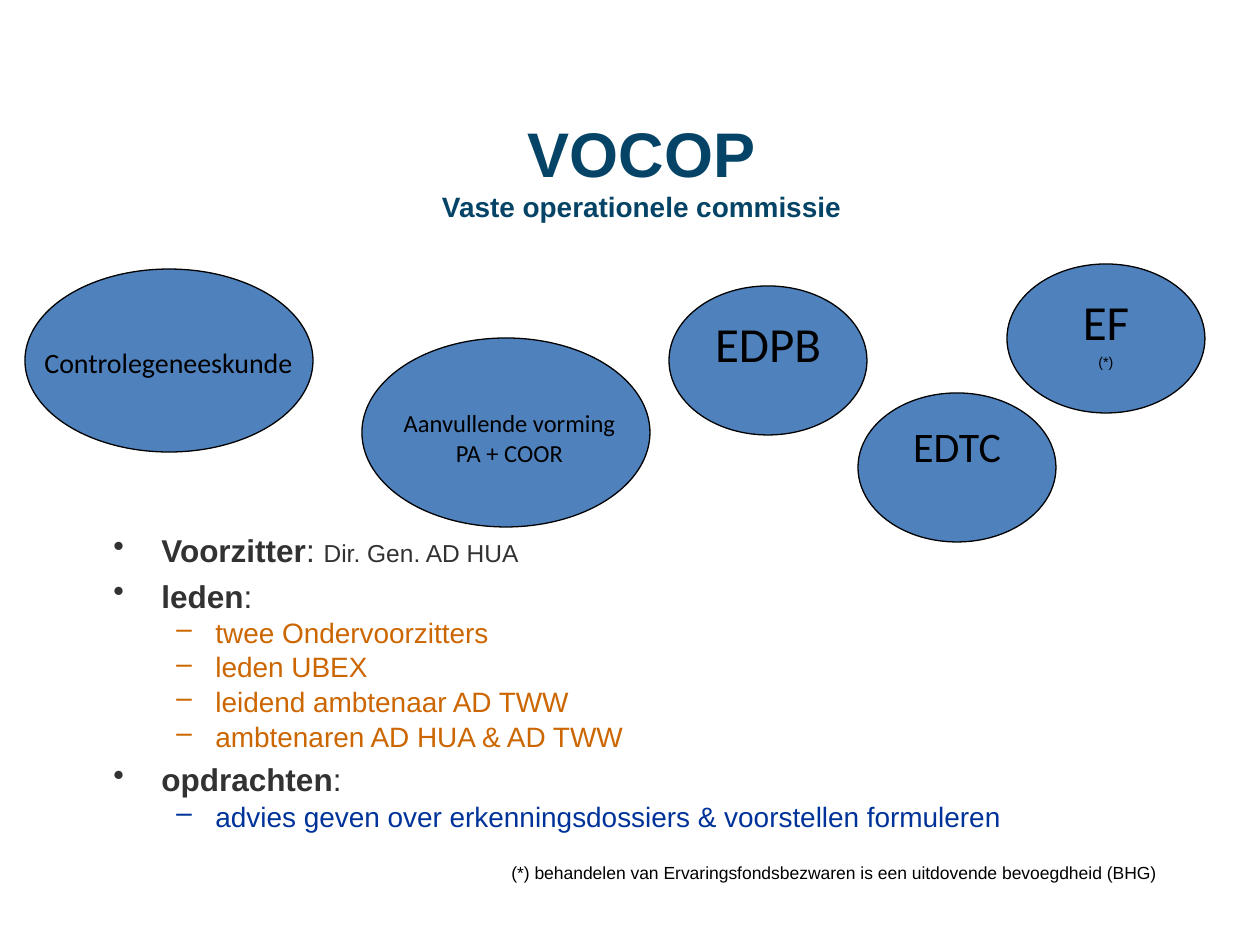
from pptx import Presentation
from pptx import util as u
from pptx.dml.color import RGBColor
from pptx.enum import shapes, text
from lxml import etree

PX = 914400 // 126
THEME = dict(
    head="Arial", oval="Calibri",
    teal="054466", grey="323232", rust="CC6600", navy="003399",
    black="000000", blue="4F81BD",
    title=36, large=28, mid=24, lead=18, sub=16, small=14, note=10,
)
MID = text.PP_ALIGN.CENTER

deck = Presentation()
deck.slide_width, deck.slide_height = 1260 * PX, 945 * PX
slide = deck.slides.add_slide(deck.slide_layouts[6])


def add_run(para, words, size, color="black", face="head", bold=False):
    run = para.add_run()
    run.text = words
    font = run.font
    font.name, font.size, font.bold = THEME[face], u.Pt(THEME[size]), bold
    font.color.rgb = RGBColor.from_string(THEME[color])
    return run


def add_box(left, top, width, height):
    box = slide.shapes.add_textbox(left * PX, top * PX, width * PX, height * PX)
    box.text_frame.word_wrap = True
    return box.text_frame


title = add_box(106, 106, 1071, 126)
title.vertical_anchor = text.MSO_ANCHOR.MIDDLE
para = title.paragraphs[0]
para.alignment = MID
add_run(para, "VOCOP", "title", "teal", bold=True)
para.add_line_break()
add_run(para, "Vaste operationele commissie", "sub", "teal", bold=True)

body = add_box(101, 525, 1081, 384)
items = [
    (0, 0, [("Voorzitter", "lead", "grey", True), (": ", "lead", "grey", False),
            ("Dir. Gen. AD HUA", "small", "grey", False)]),
    (0, 4.3, [("leden", "lead", "grey", True), (":", "lead", "grey", False)]),
    (1, 0.6, [("twee Ondervoorzitters", "sub", "rust", False)]),
    (1, 0.6, [("leden UBEX", "sub", "rust", False)]),
    (1, 0.6, [("leidend ambtenaar AD TWW", "sub", "rust", False)]),
    (1, 0.6, [("ambtenaren AD HUA & AD TWW", "sub", "rust", False)]),
    (0, 4.3, [("opdrachten", "lead", "grey", True), (":", "lead", "grey", False)]),
    (1, 0.6, [("advies geven over erkenningsdossiers & voorstellen formuleren",
               "sub", "navy", False)]),
]
levels = [(48, 48, "•"), (102, 39, "–")]
for row, (level, gap, runs) in enumerate(items):
    para = body.add_paragraph() if row else body.paragraphs[0]
    para.level = level
    para.space_before = u.Pt(gap)
    indent, hang, mark = levels[level]
    props = para._p.get_or_add_pPr()
    props.set("marL", str(indent * PX))
    props.set("indent", str(-hang * PX))
    bullet = etree.SubElement(
        props, "{http://schemas.openxmlformats.org/drawingml/2006/main}buChar")
    bullet.set("char", mark)
    for words, size, color, bold in runs:
        add_run(para, words, size, color, bold=bold)

para = body.add_paragraph()
para.alignment = text.PP_ALIGN.RIGHT
para.space_before = u.Pt(16.5)
para._p.get_or_add_pPr().set("marR", str(14 * PX))
add_run(para, "(*) behandelen van Ervaringsfondsbezwaren is een uitdovende "
        "bevoegdheid (BHG)", "note")

ovals = [
    (25, 269, 288, 183, None, None),
    (362, 338, 288, 189, None, None),
    (858, 393, 198, 149, "EDTC", "mid"),
    (669, 286, 198, 149, "EDPB", "large"),
    (1007, 264, 198, 149, "EF", "large"),
]
for left, top, width, height, words, size in ovals:
    oval = slide.shapes.add_shape(
        shapes.MSO_SHAPE.OVAL, left * PX, top * PX, width * PX, height * PX)
    oval.shadow.inherit = False
    oval.fill.solid()
    oval.fill.fore_color.rgb = RGBColor.from_string(THEME["blue"])
    oval.line.color.rgb = RGBColor.from_string(THEME["black"])
    oval.line.width = u.Pt(0.75)
    if words:
        frame = oval.text_frame
        frame.vertical_anchor = text.MSO_ANCHOR.TOP
        frame.paragraphs[0].alignment = MID
        add_run(frame.paragraphs[0], words, size, face="oval")

para = frame.add_paragraph()
para.alignment = MID
star = add_run(para, "(*)", "small")
star.font._element.set("baseline", "30000")

labels = [
    (379, 402, 261, 97, "small", ["Aanvullende vorming", "PA + COOR"]),
    (26, 339, 285, 47, "sub", ["Controlegeneeskunde"]),
]
for left, top, width, height, size, lines in labels:
    frame = add_box(left, top, width, height)
    for row, words in enumerate(lines):
        para = frame.add_paragraph() if row else frame.paragraphs[0]
        para.alignment = MID
        add_run(para, words, size, face="oval")

deck.save("out.pptx")
